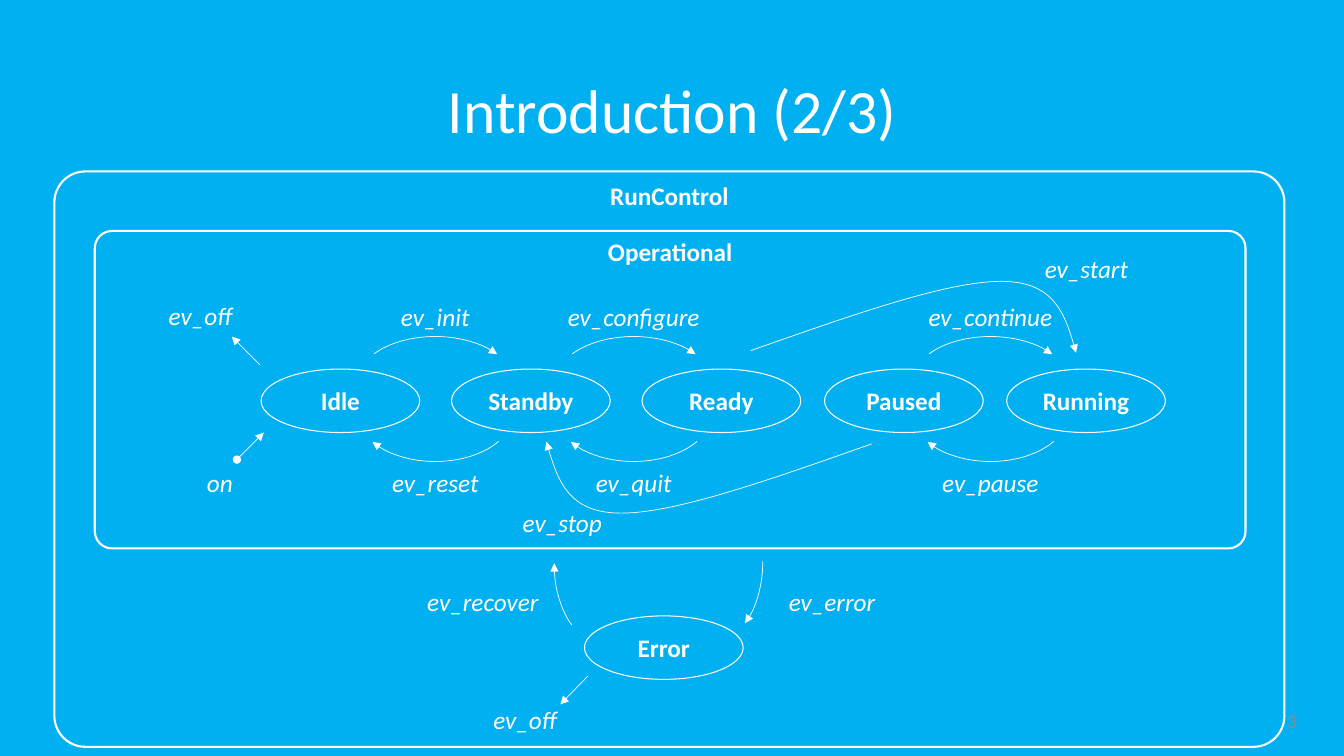
from lxml import etree
from pptx import Presentation
from pptx.dml.color import RGBColor
from pptx.enum.shapes import MSO_CONNECTOR, MSO_SHAPE
from pptx.enum.text import MSO_ANCHOR, MSO_AUTO_SIZE, PP_ALIGN
from pptx.oxml.ns import qn
from pptx.util import Cm, Pt

OVAL, ARC, ROUNDED = MSO_SHAPE.OVAL, MSO_SHAPE.ARC, MSO_SHAPE.ROUNDED_RECTANGLE
STRAIGHT = MSO_CONNECTOR.STRAIGHT
TOP, MIDDLE = MSO_ANCHOR.TOP, MSO_ANCHOR.MIDDLE
CENTER, RIGHT = PP_ALIGN.CENTER, PP_ALIGN.RIGHT
FIT_SHAPE = MSO_AUTO_SIZE.SHAPE_TO_FIT_TEXT

COLORS = {"background": "00B0F0", "ink": "FFFFFF", "number": "8C8C8C"}
STATE_FONT = {"size": Pt(18), "bold": True}
EVENT_FONT = {"size": Pt(18), "italic": True}
STATE_W, STATE_H = 4, 1.6
LABEL_H = 1.02
LABEL_W = {
    "ev_init": 2.26, "ev_configure": 3.86, "ev_continue": 3.66, "ev_reset": 2.72,
    "ev_quit": 2.44, "ev_pause": 2.97, "ev_start": 2.64, "ev_stop": 2.54, "on": 1.17,
    "ev_off": 2.13, "ev_recover": 3.35, "ev_error": 2.72,
}
HALF_ARC, QUARTER_ARC = (15.364, 92.323), (15.364, 54.016)
# Fractions of the curve's box: start point, then three points for each Bézier
CURVE = [(0, 0.97), (0.3, 0.49), (0.6, 0), (0.77, 0), (0.93, 0), (0.97, 0.51), (1, 1)]


def write(tf, text, font, color="ink", align=CENTER):
    p = tf.paragraphs[0]
    p.alignment = align
    r = p.add_run()
    r.text = text
    r.font.name = "Calibri"
    r.font.color.rgb = RGBColor.from_string(COLORS[color])
    for name, value in font.items():
        setattr(r.font, name, value)


def set_frame(tf, **values):
    for name, value in values.items():
        setattr(tf, name, value)


def draw_line(line, width, ends=None):
    """Colour a line and put arrowheads on it; ends maps head/tail to a type."""
    line.color.rgb = RGBColor.from_string(COLORS["ink"])
    line.width = Pt(width)
    ln = line._get_or_add_ln()
    for end in ("head", "tail"):
        if ends and end in ends:
            etree.SubElement(ln, qn(f"a:{end}End")).set("type", ends[end])


def add_outline(s, kind, x, y, w, h, width, adjust=(), ends=None):
    sp = s.shapes.add_shape(kind, Cm(x), Cm(y), Cm(w), Cm(h))
    sp.shadow.inherit = False
    sp.fill.background()
    for i, value in enumerate(adjust):
        sp.adjustments[i] = value
    draw_line(sp.line, width, ends)
    return sp


def add_state(s, name, x, y):
    sp = add_outline(s, OVAL, x, y, STATE_W, STATE_H, 0.75)
    set_frame(sp.text_frame, margin_left=0, margin_right=0, vertical_anchor=MIDDLE)
    write(sp.text_frame, name, STATE_FONT)


def add_region(s, name, x, y, w, h):
    sp = add_outline(s, ROUNDED, x, y, w, h, 1.5, [0.054])
    set_frame(sp.text_frame, margin_top=0, margin_bottom=0, vertical_anchor=TOP)
    write(sp.text_frame, name, STATE_FONT)


def add_event(s, name, center, y):
    w = LABEL_W[name]
    tf = s.shapes.add_textbox(Cm(center - w / 2), Cm(y), Cm(w), Cm(LABEL_H)).text_frame
    set_frame(tf, word_wrap=False, auto_size=FIT_SHAPE)
    write(tf, name, EVENT_FONT)


def add_arc(s, x, y, h, sweep, flipped=False, rotation=0):
    end = "head" if flipped else "tail"
    sp = add_outline(s, ARC, x, y, STATE_W, h, 0.5, sweep, {end: "triangle"})
    sp.rotation = rotation
    if flipped:
        sp._element.spPr.xfrm.set("flipV", "1")


def add_arrow(s, x1, y1, x2, y2, **ends):
    cx = s.shapes.add_connector(STRAIGHT, Cm(x1), Cm(y1), Cm(x2), Cm(y2))
    draw_line(cx.line, 0.5, {"tail": "triangle", **ends})
    etree.SubElement(cx._element.spPr, qn("a:effectLst"))


def add_curve(s, x, y, w, h, rotation=0):
    points = [(Cm(x + fx * w), Cm(y + fy * h)) for fx, fy in CURVE]
    fb = s.shapes.build_freeform(*points[0])
    fb.add_line_segments(points[1:], close=False)
    sp = fb.convert_to_shape()
    segments = list(sp._element.iter(qn("a:lnTo")))
    for i in range(0, len(segments), 3):
        bezier = etree.Element(qn("a:cubicBezTo"))
        segments[i].addprevious(bezier)
        for segment in segments[i:i + 3]:
            bezier.append(segment[0])
            segment.getparent().remove(segment)
    sp.rotation = rotation
    sp.shadow.inherit = False
    sp.fill.background()
    draw_line(sp.line, 0.5, {"tail": "triangle"})


def add_title(s, text, x, y, w, h):
    title = s.shapes.title
    title.left, title.top, title.width, title.height = Cm(x), Cm(y), Cm(w), Cm(h)
    title.text_frame.vertical_anchor = MIDDLE
    title.text_frame.paragraphs[0].line_spacing = 0.9
    write(title.text_frame, text, {"size": Pt(44)})


def add_slide_number(s, text, x, y, w, h):
    tf = s.shapes.add_textbox(Cm(x), Cm(y), Cm(w), Cm(h)).text_frame
    set_frame(tf, word_wrap=True, vertical_anchor=MIDDLE)
    write(tf, text, {"size": Pt(14)}, "number", RIGHT)


def add_run_control(s, x, y, w, h):
    """The outer region with its error state."""
    add_region(s, "RunControl", x, y, w, h)
    add_state(s, "Error", x + 13.36, y + 11.2)
    add_arc(s, x + 14.66, y + 8.63, 2.39, QUARTER_ARC, flipped=True, rotation=90)
    add_arc(s, x + 11.79, y + 8.68, 2.39, QUARTER_ARC, rotation=90)
    add_arrow(s, x + 13.44, y + 12.72, x + 12.75, y + 13.43)
    for name, dx, dy in [("ev_recover", 10.8, 10.34), ("ev_error", 19.6, 10.34),
                         ("ev_off", 11.86, 13.31)]:
        add_event(s, name, x + dx, y + dy)


def add_operational(s, x, y, w, h):
    """The inner region with its five states and their transitions."""
    add_region(s, "Operational", x, y, w, h)
    for name, dx in [("Idle", 4.19), ("Standby", 8.99), ("Ready", 13.79),
                     ("Paused", 18.39), ("Running", 22.98)]:
        add_state(s, name, x + dx, y + 3.48)
    for forward, back, dx in [("ev_init", "ev_reset", 6.58),
                              ("ev_configure", "ev_quit", 11.58),
                              ("ev_continue", "ev_pause", 20.57)]:
        add_arc(s, x + dx, y + 2.66, 2.39, HALF_ARC, flipped=True)
        add_arc(s, x + dx, y + 3.27, 2.54, HALF_ARC)
        add_event(s, forward, x + dx + STATE_W / 2, y + 1.65)
        add_event(s, back, x + dx + STATE_W / 2, y + 5.84)
    add_curve(s, x + 16.53, y + 1.27, 8.2, 1.8)
    add_curve(s, x + 11.38, y + 5.31, 8.2, 1.8, rotation=180)
    add_arrow(s, x + 3.58, y + 5.76, x + 4.26, y + 5.08, head="oval")
    add_arrow(s, x + 4.16, y + 3.37, x + 3.45, y + 2.66)
    for name, dx, dy in [("ev_start", 24.99, 0.45), ("ev_stop", 11.78, 6.85),
                         ("on", 3.15, 5.84), ("ev_off", 2.66, 1.62)]:
        add_event(s, name, x + dx, y + dy)


def main():
    prs = Presentation()
    prs.slide_width, prs.slide_height = Cm(33.87), Cm(19.05)
    s = prs.slides.add_slide(prs.slide_layouts[5])
    s.background.fill.solid()
    s.background.fill.fore_color.rgb = RGBColor.from_string(COLORS["background"])
    add_title(s, "Introduction (2/3)", 2.34, 1.02, 29.21, 3.68)
    add_run_control(s, 1.37, 4.32, 31, 14.5)
    add_operational(s, 2.39, 5.82, 29, 8)
    add_slide_number(s, "3", 25.32, 17.65, 7.62, 1.02)
    prs.save("out.pptx")


if __name__ == "__main__":
    main()
